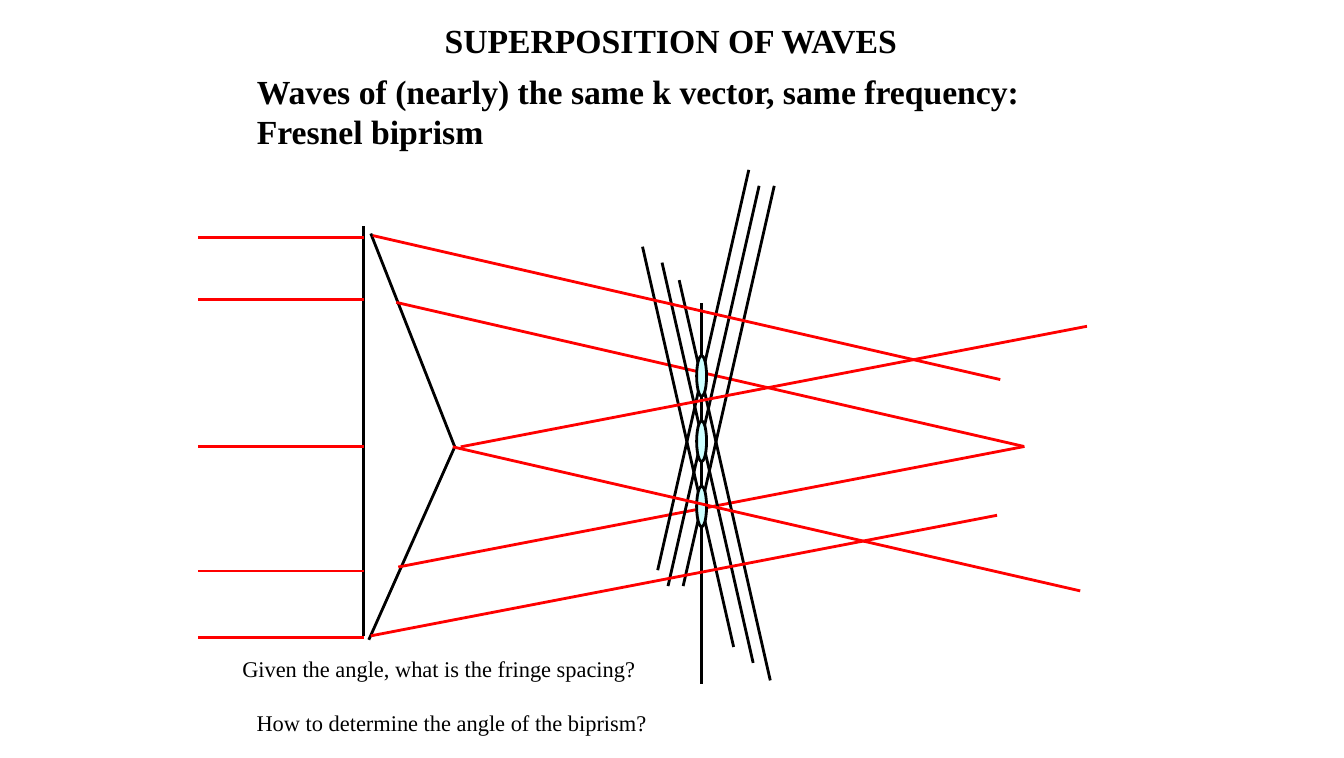
"""Build the Fresnel biprism slide."""
from lxml import etree
from pptx import Presentation, util as u
from pptx.dml import color
from pptx.enum import shapes, text
from pptx.oxml import ns

BLACK, RED, PALE = "000000", "FF0000", "CCFFFF"


def rgb(code):
    """Turn a hex string into a colour."""
    return color.RGBColor.from_string(code)


def apply(target, values):
    """Set every attribute named in values on target."""
    for name, value in values.items():
        setattr(target, name, value)


class Board:
    """Hold the style and the current slide."""

    heading = {"name": "Times New Roman", "size": u.Pt(24), "bold": True}
    question = {"name": "Times New Roman", "size": u.Pt(16), "bold": False}
    frame = {"word_wrap": True, "auto_size": text.MSO_AUTO_SIZE.NONE,
             "vertical_anchor": text.MSO_ANCHOR.TOP}
    paragraph = {"alignment": text.PP_ALIGN.LEFT, "line_spacing": 1.0,
                 "space_before": u.Pt(0), "space_after": u.Pt(0)}
    stroke = u.Pt(2)

    def __init__(self, slide):
        """Keep the slide to draw on."""
        self.slide = slide

    def fill_text(self, holder, place, lines, font):
        """Place a text holder and fill it with formatted lines."""
        apply(holder, dict(zip(("left", "top", "width", "height"), map(u.Cm, place))))
        apply(holder.text_frame, self.frame)
        holder.text_frame.text = "\n".join(lines)
        for line in holder.text_frame.paragraphs:
            apply(line, self.paragraph)
            apply(line.font, font)
            line.font.color.rgb = rgb(BLACK)
            properties = line._p.get_or_add_pPr()
            properties.set("marL", "0")
            properties.set("indent", "0")
            bullet = etree.Element(ns.qn("a:buNone"))
            properties.find(ns.qn("a:spcAft")).addnext(bullet)

    def ask(self, place, wording):
        """Add a question in a text box."""
        box = self.slide.shapes.add_textbox(*map(u.Cm, place))
        self.fill_text(box, place, [wording], self.question)

    def line(self, start, end, code=BLACK):
        """Add a straight line between two points."""
        segment = self.slide.shapes.add_connector(
            shapes.MSO_CONNECTOR.STRAIGHT, *map(u.Cm, (*start, *end)))
        segment.line.color.rgb = rgb(code)
        segment.line.width = self.stroke
        etree.SubElement(segment._element.spPr, ns.qn("a:effectLst"))

    def lines(self, starts, shift, code=BLACK):
        """Add parallel lines with one common shift."""
        for x, y in starts:
            self.line((x, y), (x + shift[0], y + shift[1]), code)

    def fringe(self, x, y):
        """Add one bright fringe."""
        spot = self.slide.shapes.add_shape(
            shapes.MSO_SHAPE.OVAL, *map(u.Cm, (x, y, 0.25, 1.02)))
        spot.shadow.inherit = False
        spot.fill.solid()
        spot.fill.fore_color.rgb = rgb(PALE)
        spot.line.color.rgb = rgb(BLACK)
        spot.line.width = self.stroke


def main():
    """Draw the slide and save it."""
    deck = Presentation()
    apply(deck, {"slide_width": u.Cm(33.78), "slide_height": u.Cm(19.05)})
    board = Board(deck.slides.add_slide(deck.slide_layouts[1]))
    title, topic = board.slide.placeholders
    board.fill_text(title, (10.92, 0.38, 12.6, 1.27),
                    ["SUPERPOSITION OF WAVES"], board.heading)
    board.fill_text(topic, (6.2, 1.65, 20.5, 2.29),
                    ["Waves of (nearly) the same k vector, same frequency:",
                     "Fresnel biprism"], board.heading)

    base_x, axis_y, screen_x = 9.14, 11.23, 17.63
    falling, rising = (15.77, 3.62), (15.74, -3.03)
    apex = (11.43, axis_y)

    board.line((base_x, 5.69), (base_x, 15.98))
    for corner in ((9.32, 5.87), (9.27, 16.08)):
        board.line(corner, apex)

    board.lines([(9.96, 7.6)], falling, RED)
    board.lines([(10.01, 14.25)], rising, RED)
    board.line((screen_x, 7.62), (screen_x, 17.2))
    board.lines([(18.82, 4.27), (19.08, 4.67), (19.46, 4.67)], (-2.29, 10.06))
    board.lines([(16.15, 6.2), (16.64, 6.6), (17.07, 7.04)], (2.29, 10.06))
    for order in range(3):
        board.fringe(17.51, 8.94 + 1.64 * order)

    board.lines([(11.38, axis_y), (9.37, 5.92)], falling, RED)
    board.lines([(11.58, axis_y), (9.32, 15.98)], rising, RED)
    incoming = [(4.98, y) for y in (5.97, 7.52, axis_y, 14.35, 16.03)]
    board.lines(incoming, (base_x - 4.98, 0), RED)

    board.ask((5.84, 16.33, 12.88, 1.09), "Given the angle, what is the fringe spacing?")
    board.ask((6.2, 17.7, 12.78, 1.09), "How to determine the angle of the biprism?")
    deck.save("out.pptx")


if __name__ == "__main__":
    main()
